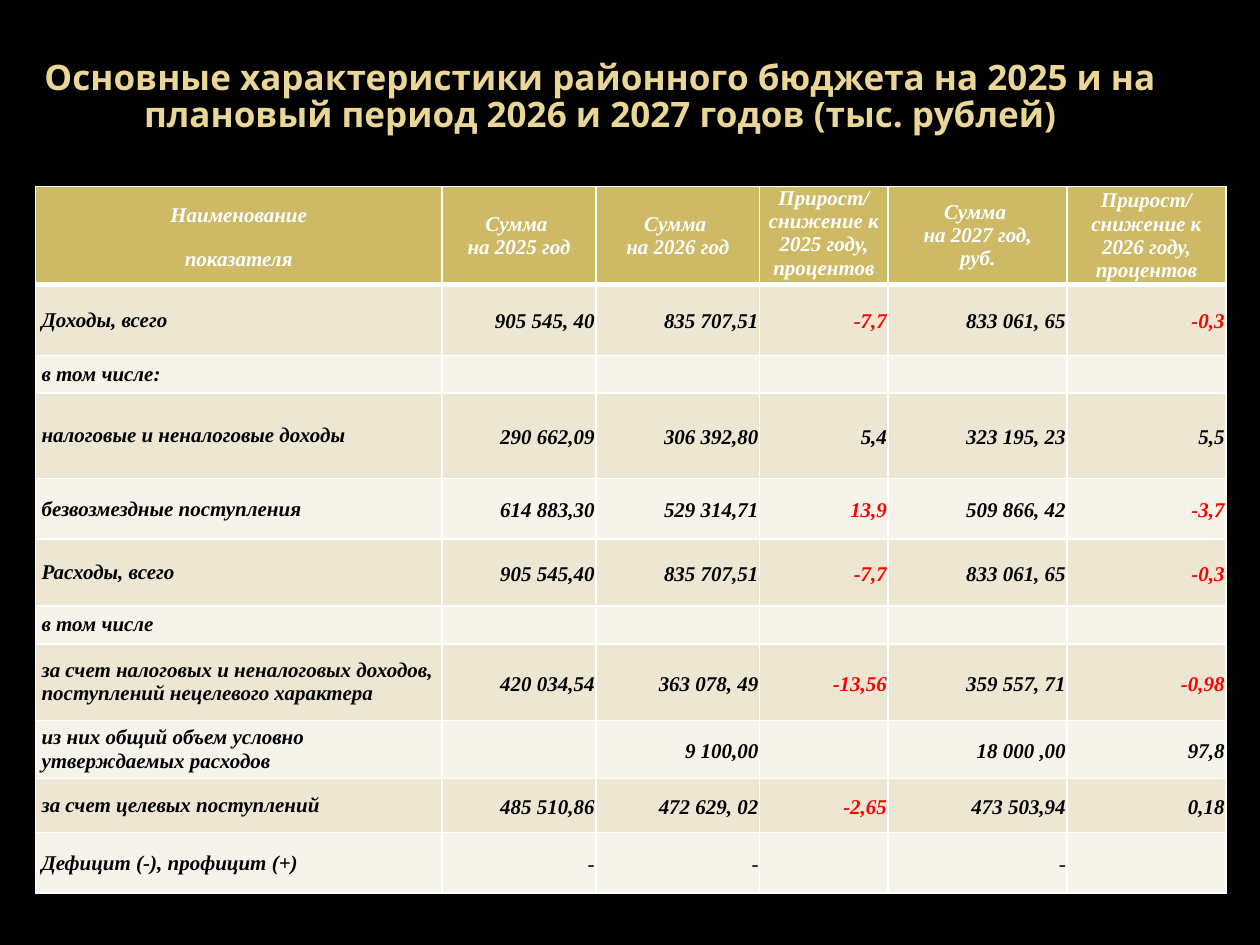
from lxml.etree import SubElement
from pptx import Presentation
from pptx.dml.color import RGBColor
from pptx.enum.text import MSO_ANCHOR as Anchor, PP_ALIGN as Align
from pptx.oxml.ns import qn
from pptx.util import Inches, Pt

TITLE = ("Основные характеристики районного бюджета на 2025 и на "
         "плановый период 2026 и 2027 годов (тыс. рублей)")
HEADINGS = [
    "Наименование\nпоказателя",
    "Сумма \nна 2025 год",
    "Сумма \nна 2026 год",
    "Прирост/ снижение к 2025 году, процентов",
    "Сумма \nна 2027 год,\nруб.",
    "Прирост/ снижение к 2026 году, процентов",
]
INDICATORS = [
    ["Доходы, всего", "905 545, 40", "835 707,51", "-7,7", "833 061, 65", "-0,3"],
    ["в том числе:", "", "", "", "", ""],
    ["налоговые и неналоговые доходы",
     "290 662,09", "306 392,80", "5,4", "323 195, 23", "5,5"],
    ["безвозмездные поступления",
     "614 883,30", "529 314,71", "13,9", "509 866, 42", "-3,7"],
    ["Расходы, всего", "905 545,40", "835 707,51", "-7,7", "833 061, 65", "-0,3"],
    ["в том числе", "", "", "", "", ""],
    ["за счет налоговых и неналоговых доходов, поступлений нецелевого характера",
     "420 034,54", "363 078, 49", "-13,56", "359 557, 71", "-0,98"],
    ["из них общий объем условно утверждаемых расходов",
     "", "9 100,00", "", "18 000 ,00", "97,8"],
    ["за счет целевых поступлений",
     "485 510,86", "472 629, 02", "-2,65", "473 503,94", "0,18"],
    ["Дефицит (-), профицит (+)", "-", "-", "", "-", ""],
]
COLUMN_WIDTHS = [3.23, 1.22, 1.3, 1.02, 1.42, 1.26]
ROW_HEIGHTS = [0.78, 0.56, 0.3, 0.68, 0.48, 0.53, 0.3, 0.61, 0.46, 0.43, 0.48]
BANDS = ["F6F3EA", "EDE6D3"]
DECLINES = {"13,9"}


def color(value):
    """Turn a hex string into a colour."""
    return RGBColor.from_string(value)


def format_runs(paragraph, font_name, size, ink, bold=True, italic=False):
    """Apply one font to every run of a paragraph."""
    for run in paragraph.runs:
        run.font.name = font_name
        run.font.size = Pt(size)
        run.font.bold = bold
        run.font.italic = italic
        run.font.color.rgb = color(ink)


def add_title(slide):
    """Place and format the slide title."""
    title = slide.shapes.title
    title.left, title.top = Inches(0.2), Inches(0)
    title.width, title.height = Inches(9.13), Inches(1.55)
    frame = title.text_frame
    frame.text = TITLE
    frame.word_wrap = True
    frame.vertical_anchor = Anchor.MIDDLE
    heading = frame.paragraphs[0]
    heading.alignment = Align.CENTER
    heading.line_spacing = 0.9
    format_runs(heading, "Noto Sans", 20, "EAD696")


def set_borders(cell, top, bottom):
    """Draw white borders, with the given top and bottom widths."""
    properties = cell._tc.get_or_add_tcPr()
    for side, width in (("L", 1), ("R", 1), ("T", top), ("B", bottom)):
        line = SubElement(properties, qn(f"a:ln{side}"), w=str(Pt(width)))
        fill = SubElement(line, qn("a:solidFill"))
        SubElement(fill, qn("a:srgbClr"), val="FFFFFF")


def fill_cell(cell, text, background, ink, alignment, spaced, bold=True):
    """Write a cell's text and format it."""
    cell.fill.solid()
    cell.fill.fore_color.rgb = color(background)
    cell.margin_left = cell.margin_right = Inches(0.01)
    cell.margin_top = cell.margin_bottom = Inches(0)
    cell.vertical_anchor = Anchor.MIDDLE
    cell.text_frame.text = text
    for paragraph in cell.text_frame.paragraphs:
        paragraph.alignment = alignment
        if not text:
            paragraph._p.get_or_add_endParaRPr().set("sz", "1200")
        elif spaced:
            paragraph.line_spacing = 1.15
            paragraph.space_after = Pt(10)
        format_runs(paragraph, "Times New Roman", 12, ink, bold, True)


def fill_heading(cell, column):
    """Fill one cell of the heading row."""
    set_borders(cell, 1, 3)
    fill_cell(cell, HEADINGS[column], "CEB966", "FFFFFF", Align.CENTER, column == 0)
    if column == 3:
        cell.vertical_anchor = Anchor.TOP


def fill_indicator(cell, row, column, text):
    """Fill one cell of an indicator row."""
    set_borders(cell, 3 if row == 1 else 1, 1)
    is_dash = text == "-"
    is_decline = text in DECLINES or text.startswith("-") and not is_dash
    fill_cell(cell, text, BANDS[row % 2], "FF0000" if is_decline else "000000",
              Align.RIGHT if column else Align.LEFT, column > 0, not is_dash)
    if column == 0:
        label = cell.text_frame.paragraphs[0]._p.get_or_add_pPr()
        label.set("marL", str(Inches(0.04)))
        label.set("indent", "0")


def add_budget_table(slide):
    """Add the table of budget indicators."""
    budget = slide.shapes.add_table(
        len(ROW_HEIGHTS), len(COLUMN_WIDTHS), Inches(0.28), Inches(1.48),
        Inches(sum(COLUMN_WIDTHS)), Inches(sum(ROW_HEIGHTS))).table
    for column, width in zip(budget.columns, COLUMN_WIDTHS):
        column.width = Inches(width)
    for row, height in zip(budget.rows, ROW_HEIGHTS):
        row.height = Inches(height)
    for column in range(len(HEADINGS)):
        fill_heading(budget.cell(0, column), column)
    for row, indicator in enumerate(INDICATORS, start=1):
        for column, text in enumerate(indicator):
            fill_indicator(budget.cell(row, column), row, column, text)


def main():
    """Build the budget slide."""
    deck = Presentation()
    deck.slide_width, deck.slide_height = Inches(10), Inches(7.5)
    slide = deck.slides.add_slide(deck.slide_layouts[5])
    slide.background.fill.solid()
    slide.background.fill.fore_color.rgb = color("000000")
    add_title(slide)
    add_budget_table(slide)
    deck.save("out.pptx")


if __name__ == "__main__":
    main()
